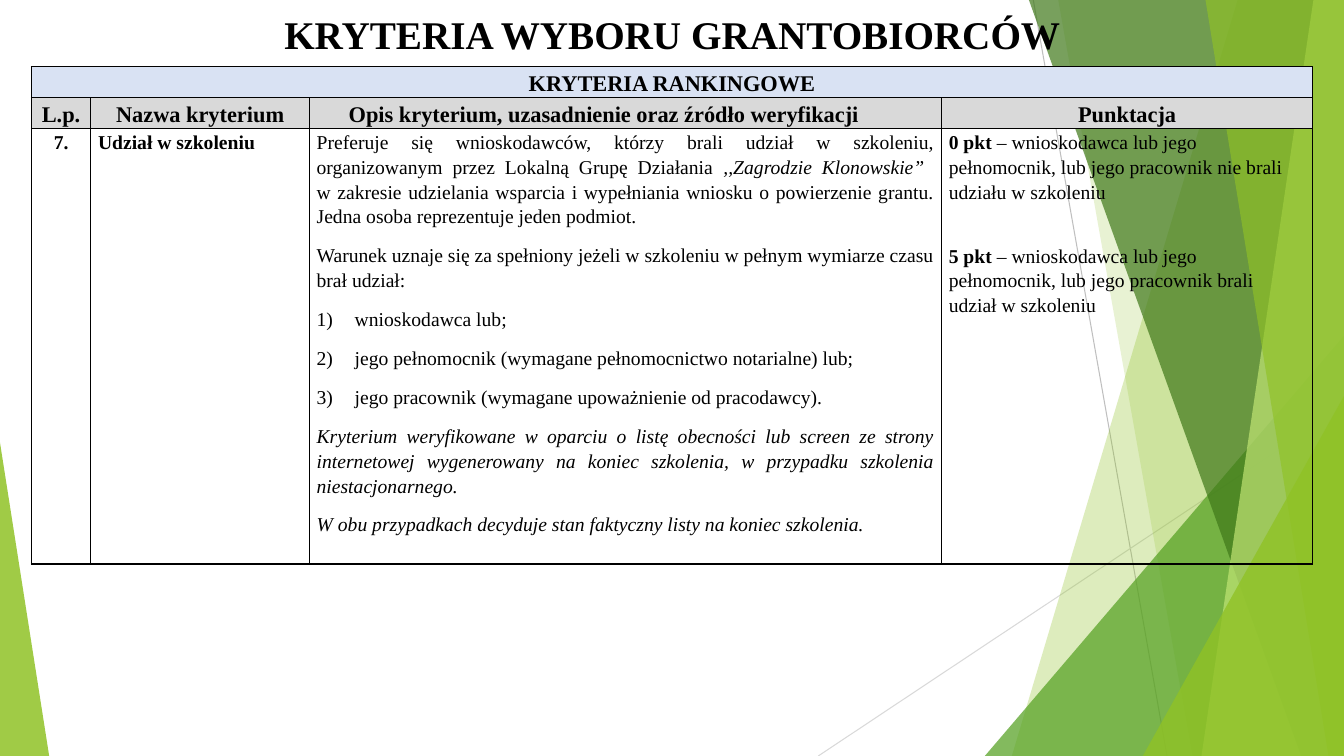
from lxml import etree
from pptx import Presentation
from pptx.dml.color import RGBColor
from pptx.enum.shapes import MSO_CONNECTOR as CONN, MSO_SHAPE as SHAPE
from pptx.enum.text import MSO_ANCHOR as ANCHOR, PP_ALIGN as ALIGN
from pptx.oxml import parse_xml
from pptx.oxml.ns import nsdecls, qn
from pptx.util import Cm, Pt

WIDTH, HEIGHT = 33.87, 19.05
FONT = "Times New Roman"
LIME, GREEN, DARK_GREEN, PALE_LIME = "90C226", "54A021", "3F7819", "C0E474"
BLACK, BLUE_BAND, GREY_BAND = "000000", "D9E2F3", "D9D9D9"

COLUMNS = [1.5, 5.51, 15.93, 9.35]
ROWS = [0.78, 0.78, 10.28]
HEADERS = ["L.p.", "Nazwa kryterium",
           "Opis kryterium, uzasadnienie oraz źródło weryfikacji", "Punktacja"]
# Each paragraph is a list of (text, style) runs: b = bold, i = italic.
CONDITIONS = [
    [("Preferuje się wnioskodawców, którzy brali udział w szkoleniu, "
      "organizowanym przez Lokalną Grupę Działania ", ""),
     (",,Zagrodzie Klonowskie” ", "i"), ("\v", ""),
     ("w zakresie udzielania wsparcia i wypełniania wniosku o powierzenie grantu. "
      "Jedna osoba reprezentuje jeden podmiot.", "")],
    [("Warunek uznaje się za spełniony jeżeli w szkoleniu w pełnym wymiarze "
      "czasu brał udział:", "")],
]
PARTICIPANTS = [
    [("wnioskodawca lub;", "")],
    [("jego pełnomocnik (wymagane pełnomocnictwo notarialne) lub;", "")],
    [("jego pracownik (wymagane upoważnienie od pracodawcy).", "")],
]
VERIFICATION = [
    [("Kryterium weryfikowane w oparciu o listę obecności lub screen ze strony "
      "internetowej wygenerowany na koniec szkolenia, w przypadku szkolenia "
      "niestacjonarnego.", "i")],
    [("W obu przypadkach decyduje stan faktyczny listy na koniec szkolenia.", "i")],
]
POINTS = [
    [("0 pkt", "b"), (" – wnioskodawca lub jego pełnomocnik, lub jego pracownik "
                      "nie brali udziału w szkoleniu", "")],
    [("5 pkt", "b"), (" – wnioskodawca lub jego pełnomocnik, lub jego pracownik "
                      "brali udział w szkoleniu", "")],
]


def rgb(color):
    return RGBColor.from_string(color)


def paint(s, color, opacity):
    s.shadow.inherit = False
    s.line.fill.background()
    s.fill.solid()
    s.fill.fore_color.rgb = rgb(color)
    clr = s.fill._xPr.find(qn("a:solidFill"))[0]
    etree.SubElement(clr, qn("a:alpha")).set("val", str(opacity * 1000))


def add_ray(slide, x1, y1, x2, y2, color):
    s = slide.shapes.add_connector(CONN.STRAIGHT, Cm(x1), Cm(y1), Cm(x2), Cm(y2))
    s.line.color.rgb = rgb(color)
    s.line.width = Pt(0.75)
    etree.SubElement(s._element.spPr, qn("a:effectLst"))


def add_band(slide, top_x, bottom_x, color, opacity):
    """Full-height facet from a slanted left side to the right slide edge."""
    builder = slide.shapes.build_freeform(Cm(top_x), 0)
    builder.add_line_segments([(Cm(WIDTH), 0), (Cm(WIDTH), Cm(HEIGHT)),
                               (Cm(bottom_x), Cm(HEIGHT))], close=True)
    paint(builder.convert_to_shape(), color, opacity)


def add_wedge(slide, left, top, width, apex, color, opacity):
    """Right triangle that stands on the bottom slide edge."""
    s = slide.shapes.add_shape(SHAPE.ISOSCELES_TRIANGLE, Cm(left), Cm(top),
                               Cm(width), Cm(HEIGHT - top))
    s.adjustments[0] = apex
    paint(s, color, opacity)


def add_backdrop(slide):
    add_ray(slide, 26.04, 0, 29.41, HEIGHT, "BFBFBF")
    add_ray(slide, WIDTH, 10.24, 20.62, HEIGHT, "D9D9D9")
    add_band(slide, 31.19, 25.5, LIME, 30)
    add_band(slide, 26.67, 30.05, LIME, 20)
    add_wedge(slide, 24.82, 8.46, WIDTH - 24.82, 1, GREEN, 72)
    add_band(slide, 25.93, 32.79, DARK_GREEN, 70)
    add_band(slide, 33.1, 30.28, PALE_LIME, 70)
    add_band(slide, 30.38, 33.48, LIME, 65)
    add_wedge(slide, 28.8, 9.98, WIDTH - 28.8, 1, LIME, 80)
    add_wedge(slide, 0, 11.15, 1.24, 0, LIME, 85)


def write(p, runs, size, align, spacing=1.15, after=10):
    p.alignment, p.line_spacing, p.space_after = align, spacing, Pt(after)
    for text, style in runs:
        if text == "\v":
            p.add_line_break()
            continue
        r = p.add_run()
        r.text = text
        r.font.name, r.font.size = FONT, Pt(size)
        r.font.bold, r.font.italic = "b" in style, "i" in style
        r.font.color.rgb = rgb(BLACK)


def number(p):
    pPr = p._p.get_or_add_pPr()
    pPr.set("marL", str(Cm(0.96)))
    pPr.set("indent", str(-Cm(0.96)))
    font = etree.SubElement(pPr, qn("a:buFont"))
    font.set("typeface", FONT)
    etree.SubElement(pPr, qn("a:buAutoNum")).set("type", "arabicParenR")


def add_title(slide, left, top, width, height):
    s = slide.shapes.add_textbox(Cm(left), Cm(top), Cm(width), Cm(height))
    tf = s.text_frame
    tf.word_wrap = True
    tf.vertical_anchor = ANCHOR.MIDDLE
    write(tf.paragraphs[0], [("KRYTERIA WYBORU GRANTOBIORCÓW", "b")], 28,
          ALIGN.CENTER, 0.9, 0)


def style_cell(cell, margin, fill=None):
    cell.margin_left = cell.margin_right = Cm(margin)
    cell.margin_top = cell.margin_bottom = 0
    if fill:
        cell.fill.solid()
        cell.fill.fore_color.rgb = rgb(fill)
        cell.vertical_anchor = ANCHOR.MIDDLE
    else:
        cell.fill.background()
    tcPr = cell._tc.get_or_add_tcPr()
    for i, side in enumerate("LRTB"):
        tcPr.insert(i, parse_xml(
            f'<a:ln{side} {nsdecls("a")} w="{Pt(1)}"><a:solidFill>'
            f'<a:srgbClr val="{BLACK}"/></a:solidFill></a:ln{side}>'))


def fill_cell(cell, paragraphs, size, align):
    tf = cell.text_frame
    for i, runs in enumerate(paragraphs):
        p = tf.add_paragraph() if i else tf.paragraphs[0]
        write(p, runs, size, align)
    return tf.paragraphs


def add_criteria_table(slide, left, top):
    table = slide.shapes.add_table(len(ROWS), len(COLUMNS), Cm(left), Cm(top),
                                   Cm(sum(COLUMNS)), Cm(sum(ROWS))).table
    table.first_row = table.horz_banding = False
    for column, width in zip(table.columns, COLUMNS):
        column.width = Cm(width)
    for row, height, margin, fill in zip(table.rows, ROWS, [0.15, 0.15, 0.18],
                                         [BLUE_BAND, GREY_BAND, None]):
        row.height = Cm(height)
        for cell in row.cells:
            style_cell(cell, margin, fill)

    table.cell(0, 0).merge(table.cell(0, len(COLUMNS) - 1))
    fill_cell(table.cell(0, 0), [[("KRYTERIA RANKINGOWE", "b")]], 16, ALIGN.CENTER)
    for i, header in enumerate(HEADERS):
        fill_cell(table.cell(1, i), [[(header, "b")]], 16, ALIGN.CENTER)
    table.cell(1, 2).margin_right = Cm(1.25)

    body = [([[("7.", "b")]], ALIGN.CENTER),
            ([[("Udział w szkoleniu", "b")]], ALIGN.LEFT),
            (CONDITIONS + PARTICIPANTS + VERIFICATION, ALIGN.JUSTIFY),
            (POINTS, ALIGN.LEFT)]
    _, _, description, points = [fill_cell(table.cell(2, i), paragraphs, 14, align)
                                 for i, (paragraphs, align) in enumerate(body)]
    first = len(CONDITIONS)
    for p in description[first:first + len(PARTICIPANTS)]:
        number(p)
    points[1].space_before = Pt(18)


def main():
    prs = Presentation()
    prs.slide_width, prs.slide_height = Cm(WIDTH), Cm(HEIGHT)
    slide = prs.slides.add_slide(prs.slide_layouts[6])
    add_backdrop(slide)
    add_title(slide, 2.34, 0.2, 29.2, 1.45)
    add_criteria_table(slide, 0.79, 1.68)
    prs.save("out.pptx")


if __name__ == "__main__":
    main()
